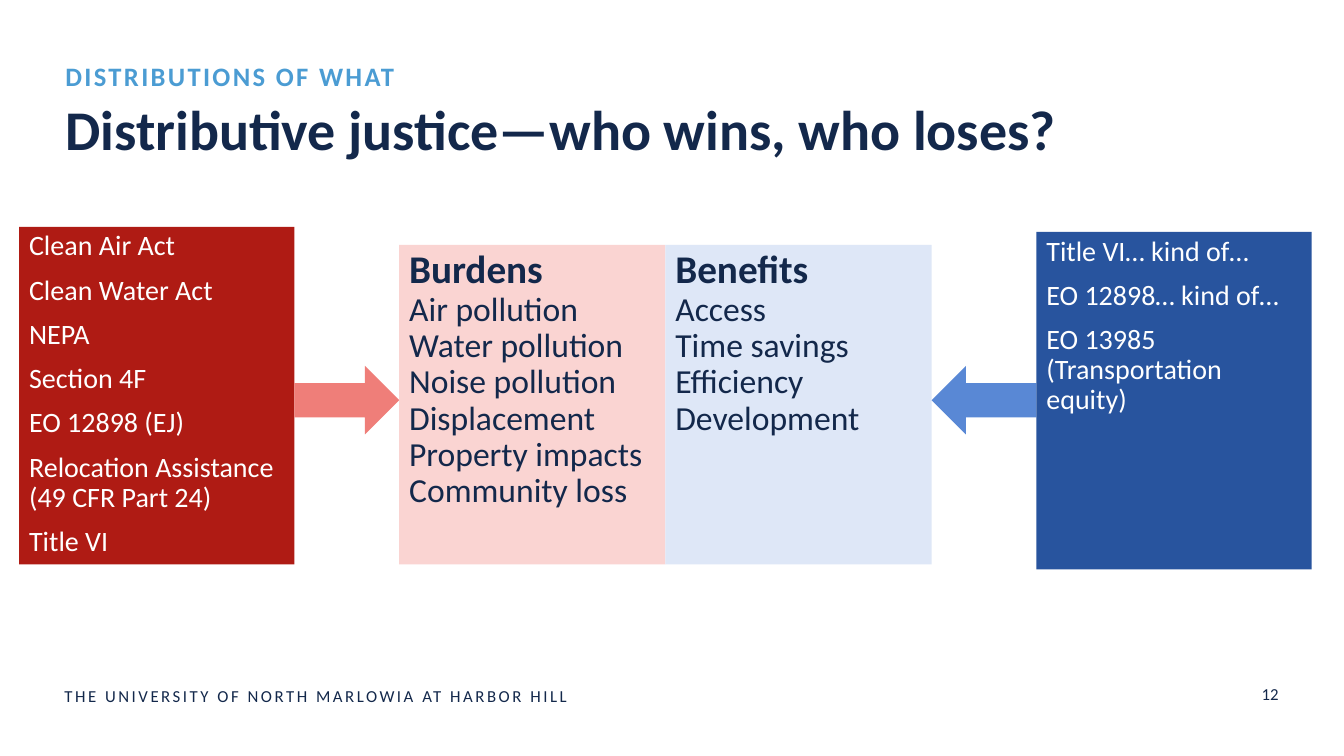
"""Builds the distributive justice slide."""
from pptx import Presentation
from pptx.dml.color import RGBColor
from pptx.enum import shapes, text
from pptx.util import Inches, Pt

NAVY = RGBColor(0x13, 0x28, 0x4B)
SKY = RGBColor(0x4B, 0x9C, 0xD3)
WHITE = RGBColor(0xFF, 0xFF, 0xFF)
RED = RGBColor(0xAF, 0x1B, 0x14)
CORAL = RGBColor(0xEF, 0x7E, 0x79)
PINK = RGBColor(0xFA, 0xD4, 0xD2)
BLUE = RGBColor(0x28, 0x54, 0x9E)
MID_BLUE = RGBColor(0x59, 0x88, 0xD5)
PALE_BLUE = RGBColor(0xDE, 0xE7, 0xF7)

EYEBROW = "DISTRIBUTIONS OF WHAT"
TITLE = "Distributive justice—who wins, who loses?"
FOOTER = "THE UNIVERSITY OF NORTH MARLOWIA AT HARBOR HILL"
PAGE = "12"

BURDEN_LAWS = ["Clean Air Act", "Clean Water Act", "NEPA", "Section 4F", "EO 12898 (EJ)",
               "Relocation Assistance (49 CFR Part 24)", "Title VI"]
BENEFIT_LAWS = ["Title VI… kind of…", "EO 12898… kind of…", "EO 13985 (Transportation equity)"]
BURDENS = ["Burdens", "Air pollution", "Water pollution", "Noise pollution", "Displacement",
           "Property impacts", "Community loss"]
BENEFITS = ["Benefits", "Access", "Time savings", "Efficiency", "Development"]

LEFT, LAW_W, ARROW_W, TOPIC_W = 0.19, 2.73, 1.04, 2.64
LAW_H, ARROW_H, TOPIC_H = 3.35, 0.68, 3.17
COLUMNS = [
    ("laws", BURDEN_LAWS, RED, 2.25),
    ("arrow", 0, CORAL, 3.63),
    ("topic", BURDENS, PINK, 2.43),
    ("topic", BENEFITS, PALE_BLUE, 2.43),
    ("arrow", 180, MID_BLUE, 3.63),
    ("laws", BENEFIT_LAWS, BLUE, 2.3),
]
SIZES = {"laws": (LAW_W, LAW_H), "arrow": (ARROW_W, ARROW_H), "topic": (TOPIC_W, TOPIC_H)}


def write(p, words, size=20, color=NAVY, bold=False, spacing=None, align=None):
    r = p.add_run()
    r.text = words
    r.font.name, r.font.size, r.font.bold = "Calibri", Pt(size), bold
    r.font.color.rgb = color
    p.alignment = align or text.PP_ALIGN.LEFT
    if spacing:
        r.font._element.set("spc", str(round(spacing * 100)))


def add_label(slide, box, words, anchor=text.MSO_ANCHOR.TOP, **style):
    tf = slide.shapes.add_textbox(*map(Inches, box)).text_frame
    tf.word_wrap, tf.vertical_anchor = True, anchor
    write(tf.paragraphs[0], words, **style)


def add_block(slide, kind, box, fill):
    preset = shapes.MSO_SHAPE.RIGHT_ARROW if kind == "arrow" else shapes.MSO_SHAPE.RECTANGLE
    sp = slide.shapes.add_shape(preset, *map(Inches, box))
    sp.shadow.inherit = False
    sp.fill.solid()
    sp.fill.fore_color.rgb = fill
    sp.line.fill.background()
    sp.text_frame.word_wrap = True
    sp.text_frame.vertical_anchor = text.MSO_ANCHOR.TOP
    return sp


def next_paragraph(tf, first):
    p = tf.paragraphs[0] if first else tf.add_paragraph()
    p.line_spacing, p.space_before = 0.9, Pt(10)
    return p


def fill_laws(tf, laws):
    for i, law in enumerate(laws):
        write(next_paragraph(tf, i == 0), law, color=WHITE)


def fill_topic(tf, lines):
    p = next_paragraph(tf, True)
    for i, line in enumerate(lines):
        if i:
            p.add_line_break()
        write(p, line, size=24 if i else 28, bold=i == 0)


def main():
    prs = Presentation()
    prs.slide_width, prs.slide_height = Inches(13.33), Inches(7.5)
    slide = prs.slides.add_slide(prs.slide_layouts[6])

    add_label(slide, (0.54, 6.75, 7.07, 0.3), FOOTER, size=12, spacing=1.8)
    add_label(slide, (9.82, 6.75, 2.96, 0.27), PAGE, size=12,
              anchor=text.MSO_ANCHOR.MIDDLE, align=text.PP_ALIGN.RIGHT)
    add_label(slide, (0.55, 0.89, 12.24, 1.14), TITLE, size=40, bold=True)
    add_label(slide, (0.55, 0.55, 12.24, 0.4), EYEBROW, size=19, color=SKY,
              bold=True, spacing=1.7)

    x = LEFT
    for kind, content, fill, top in COLUMNS:
        width, height = SIZES[kind]
        sp = add_block(slide, kind, (x, top, width, height), fill)
        if kind == "arrow":
            sp.rotation = content
        elif kind == "laws":
            fill_laws(sp.text_frame, content)
        else:
            fill_topic(sp.text_frame, content)
        x += width

    prs.save("out.pptx")


if __name__ == "__main__":
    main()
